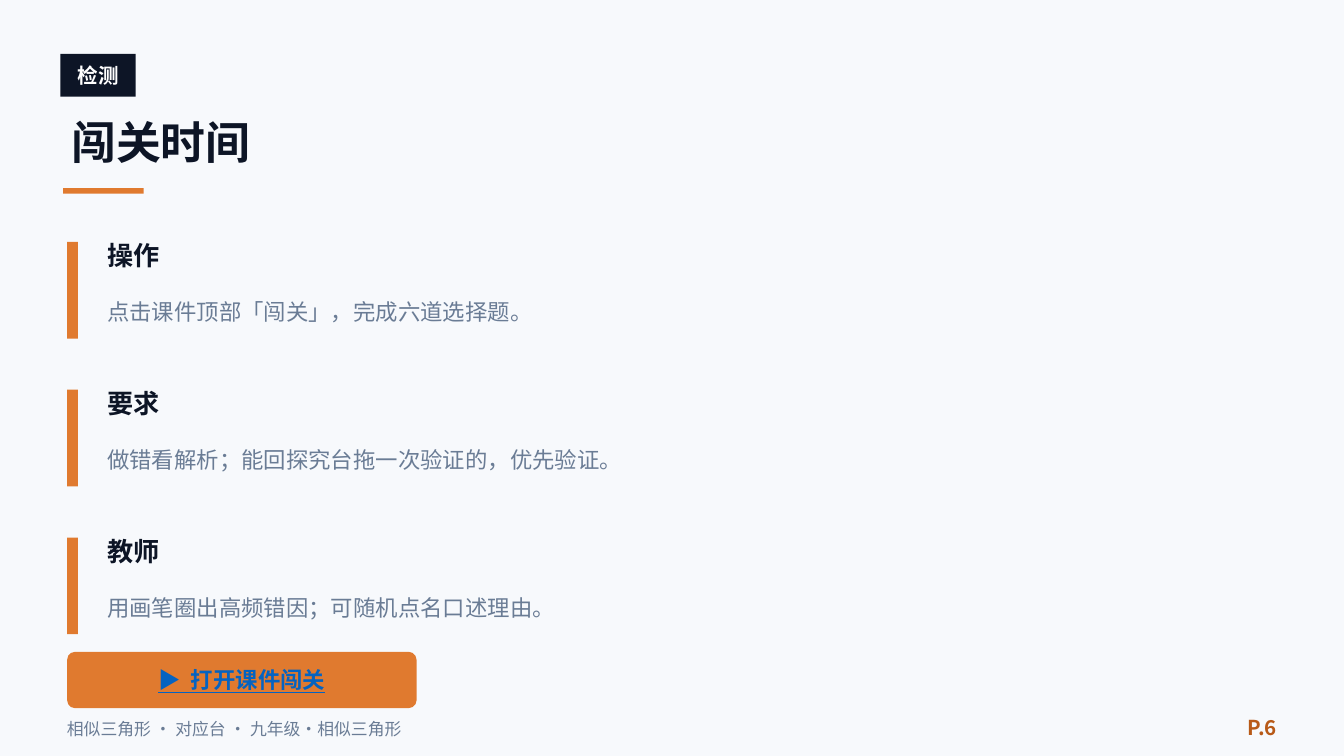
"""Build the quiz-time slide of a lesson on similar triangles."""
from dataclasses import dataclass

from lxml import etree
from pptx import Presentation
from pptx.dml.color import RGBColor
from pptx.enum import shapes, text
from pptx.oxml import ns
from pptx.util import Pt


@dataclass(frozen=True)
class Theme:
    font: str = "Noto Sans CJK SC"
    background: str = "F7F9FC"
    ink: str = "0D1526"
    accent: str = "E07A2F"
    muted: str = "6A7C95"
    white: str = "FFFFFF"
    link: str = "0563C1"
    page: str = "B85A18"
    title_size: int = 24
    heading_size: int = 14
    body_size: int = 12
    label_size: int = 11
    footer_size: int = 9


theme = Theme()
LEFT, CENTER, RIGHT = text.PP_ALIGN.LEFT, text.PP_ALIGN.CENTER, text.PP_ALIGN.RIGHT


def add_block(box, color, kind=shapes.MSO_SHAPE.RECTANGLE):
    shape = slide.shapes.add_shape(kind, *map(Pt, box))
    shape.shadow.inherit = False
    shape.fill.solid()
    shape.fill.fore_color.rgb = RGBColor.from_string(color)
    shape.line.fill.background()
    return shape


def write(box, words, size, color, bold=False, align=LEFT, shape=None):
    shape = shape or slide.shapes.add_textbox(*map(Pt, box))
    shape.left, shape.top, shape.width, shape.height = map(Pt, box)
    frame = shape.text_frame
    frame.text = words
    frame.word_wrap = True
    frame.auto_size = text.MSO_AUTO_SIZE.NONE
    frame.vertical_anchor = text.MSO_ANCHOR.MIDDLE
    frame.margin_top = frame.margin_bottom = 0
    paragraph = frame.paragraphs[0]
    paragraph.alignment = align
    font = paragraph.runs[0].font
    font.size = Pt(size)
    font.bold = bold
    font.color.rgb = RGBColor.from_string(color)
    font.name = theme.font
    east_asian = etree.Element(ns.qn("a:ea"), typeface=theme.font)
    font._element.find(ns.qn("a:latin")).addnext(east_asian)
    return font


presentation = Presentation()
presentation.slide_width = Pt(720)
presentation.slide_height = Pt(405)
slide = presentation.slides.add_slide(presentation.slide_layouts[5])
slide.background.fill.solid()
slide.background.fill.fore_color.rgb = RGBColor.from_string(theme.background)

add_block((32.4, 28.8, 40.3, 23), theme.ink)
write((32.4, 28.1, 40.3, 24.5), "检测", theme.label_size, theme.white, True, CENTER)
write((31, 56.2, 648, 39.6), "闯关时间", theme.title_size, theme.ink, True,
      shape=slide.shapes.title)
add_block((33.8, 100.8, 43.2, 3), theme.accent)

steps = [
    ("操作", "点击课件顶部「闯关」，完成六道选择题。"),
    ("要求", "做错看解析；能回探究台拖一次验证的，优先验证。"),
    ("教师", "用画笔圈出高频错因；可随机点名口述理由。"),
]
for index, (heading, detail) in enumerate(steps):
    top = 129.6 + index * 79.2
    add_block((36, top, 5.8, 51.8), theme.accent)
    write((50.4, top - 3.6, 633.6, 21.6), heading, theme.heading_size, theme.ink, True)
    write((50.4, top + 19.4, 633.6, 36), detail, theme.body_size, theme.muted)

button = add_block((36, 349.2, 187.2, 30.2), theme.accent, shapes.MSO_SHAPE.ROUNDED_RECTANGLE)
button.adjustments[0] = 0.14
button_font = write((36, 348.5, 187.2, 31.7), "▶  打开课件闯关", theme.body_size,
                    theme.link, True, CENTER)
button_font.underline = True

write((28.8, 380.2, 518.4, 20.2), "相似三角形 · 对应台 · 九年级·相似三角形",
      theme.footer_size, theme.muted)
write((648, 378.7, 43.2, 21.6), "P.6", theme.label_size, theme.page, True, RIGHT)

presentation.save("out.pptx")
